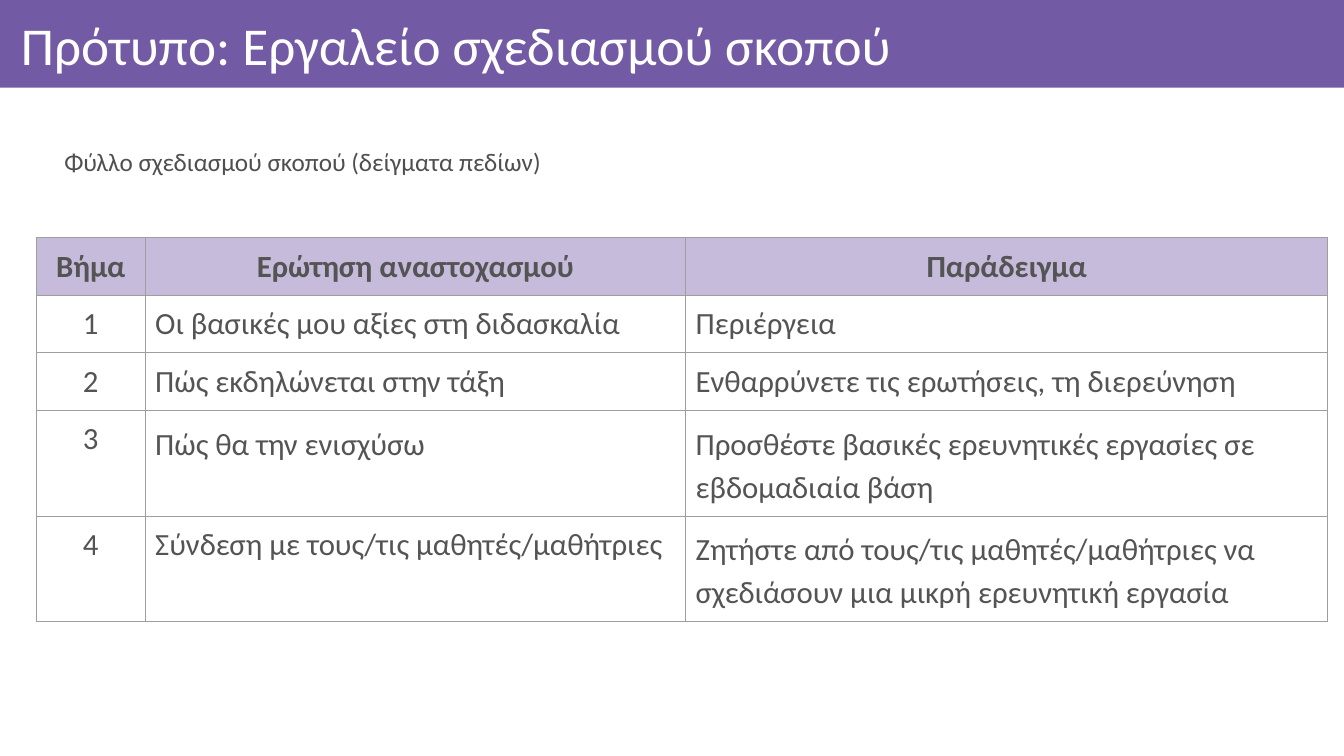
"""Build the purpose planning slide with a reflection table."""
from lxml.etree import SubElement
from pptx import Presentation
from pptx.dml.color import RGBColor
from pptx.enum.shapes import MSO_SHAPE
from pptx.enum.text import MSO_ANCHOR, PP_ALIGN
from pptx.oxml.ns import qn
from pptx.util import Inches, Pt

PURPLE = RGBColor(0x73, 0x5A, 0xA5)
LILAC = RGBColor(0xC6, 0xBB, 0xDB)
WHITE = RGBColor(0xFF, 0xFF, 0xFF)
BODY_GREY = RGBColor(0x4F, 0x4F, 0x50)
TABLE_GREY = RGBColor(0x54, 0x54, 0x54)
BORDER_GREY = RGBColor(0x9E, 0x9E, 0x9E)

SLIDE_WIDTH, SLIDE_HEIGHT = 13.33, 7.5
BANNER_HEIGHT = 0.87
TEXT_WIDTH = 13.06
TABLE_LEFT, TABLE_TOP = 0.36, 2.36
COLUMN_WIDTHS = (1.08, 5.36, 6.37)
ONE_LINE, TWO_LINES = 0.57, 1.05
ROW_HEIGHTS = (ONE_LINE, ONE_LINE, ONE_LINE, TWO_LINES, TWO_LINES)
CELL_MARGIN = 0.1
LOOSE_SPACING = 1.15
LOOSE_CELLS = {(3, 1), (3, 2), (4, 2)}

TABLE_ROWS = (
    ("Βήμα", "Ερώτηση αναστοχασμού", "Παράδειγμα"),
    ("1", "Οι βασικές μου αξίες στη διδασκαλία", "Περιέργεια"),
    ("2", "Πώς εκδηλώνεται στην τάξη", "Ενθαρρύνετε τις ερωτήσεις, τη διερεύνηση"),
    ("3", "Πώς θα την ενισχύσω",
     "Προσθέστε βασικές ερευνητικές εργασίες σε εβδομαδιαία βάση"),
    ("4", "Σύνδεση με τους/τις μαθητές/μαθήτριες",
     "Ζητήστε από τους/τις μαθητές/μαθήτριες να σχεδιάσουν μια μικρή ερευνητική εργασία"),
)


def set_attributes(target, values):
    """Set each named attribute on the target."""
    for name, value in values.items():
        setattr(target, name, value)


def set_margins(target, left, top, right, bottom):
    """Set the four inner margins of a text frame or cell, in inches."""
    set_attributes(target, {
        "margin_left": Inches(left), "margin_top": Inches(top),
        "margin_right": Inches(right), "margin_bottom": Inches(bottom),
    })


def write_text(text_frame, text, size, color, bold=False, **paragraph_format):
    """Write one formatted paragraph into a text frame."""
    paragraph = text_frame.paragraphs[0]
    set_attributes(paragraph, paragraph_format)
    run = paragraph.add_run()
    run.text = text
    set_attributes(run.font, {"name": "Calibri", "size": Pt(size), "bold": bold})
    run.font.color.rgb = color


def add_banner(slide):
    """Add the purple band across the top of the slide."""
    banner = slide.shapes.add_shape(
        MSO_SHAPE.RECTANGLE, 0, 0, Inches(SLIDE_WIDTH), Inches(BANNER_HEIGHT))
    banner.shadow.inherit = False
    banner.fill.solid()
    banner.fill.fore_color.rgb = PURPLE
    banner.line.fill.background()


def add_text(slide, box, margins, anchor, text, **text_format):
    """Add a wrapping text box with one paragraph."""
    shape = slide.shapes.add_textbox(*map(Inches, box))
    set_attributes(shape.text_frame, {"word_wrap": True, "vertical_anchor": anchor})
    set_margins(shape.text_frame, *margins)
    write_text(shape.text_frame, text, **text_format)


def add_cell_borders(cell):
    """Draw a thin grey line on all four sides of a cell."""
    properties = cell._tc.get_or_add_tcPr()
    for position, side in enumerate(("a:lnL", "a:lnR", "a:lnT", "a:lnB")):
        line = SubElement(properties, qn(side), w=str(Pt(0.75)))
        fill = SubElement(line, qn("a:solidFill"))
        SubElement(fill, qn("a:srgbClr"), val=str(BORDER_GREY))
        properties.insert(position, line)


def fill_cell(cell, row, column, text):
    """Format one table cell according to its place in the grid."""
    is_header = row == 0
    set_margins(cell, *[CELL_MARGIN] * 4)
    if is_header:
        cell.fill.solid()
        cell.fill.fore_color.rgb = LILAC
    else:
        cell.fill.background()
    add_cell_borders(cell)
    centered = is_header or column == 0
    write_text(
        cell.text_frame, text, 22, TABLE_GREY, is_header,
        alignment=PP_ALIGN.CENTER if centered else PP_ALIGN.LEFT,
        line_spacing=LOOSE_SPACING if (row, column) in LOOSE_CELLS else 1.0)


def add_reflection_table(slide):
    """Add the table of steps, questions and examples."""
    table = slide.shapes.add_table(
        len(TABLE_ROWS), len(COLUMN_WIDTHS), Inches(TABLE_LEFT), Inches(TABLE_TOP),
        Inches(sum(COLUMN_WIDTHS)), Inches(sum(ROW_HEIGHTS))).table
    table.horz_banding = False
    for column, width in zip(table.columns, COLUMN_WIDTHS):
        column.width = Inches(width)
    for row, height in zip(table.rows, ROW_HEIGHTS):
        row.height = Inches(height)
    for row, texts in enumerate(TABLE_ROWS):
        for column, text in enumerate(texts):
            fill_cell(table.cell(row, column), row, column, text)


def main():
    """Build and save the presentation."""
    presentation = Presentation()
    set_attributes(presentation, {
        "slide_width": Inches(SLIDE_WIDTH), "slide_height": Inches(SLIDE_HEIGHT)})
    slide = presentation.slides.add_slide(presentation.slide_layouts[6])
    add_banner(slide)
    add_text(
        slide, (0.11, 0.09, TEXT_WIDTH, BANNER_HEIGHT - 0.09), (0.1, 0.06, 0.06, 0.06),
        MSO_ANCHOR.MIDDLE, "Πρότυπο: Εργαλείο σχεδιασμού σκοπού",
        size=38, color=WHITE, line_spacing=0.9)
    add_text(
        slide, (0.54, 1.36, TEXT_WIDTH, 5.78), (0.1, 0.05, 0.1, 0.05),
        MSO_ANCHOR.TOP, "Φύλλο σχεδιασμού σκοπού (δείγματα πεδίων)",
        size=18, color=BODY_GREY, line_spacing=LOOSE_SPACING, space_before=Pt(12))
    add_reflection_table(slide)
    presentation.save("out.pptx")


if __name__ == "__main__":
    main()
